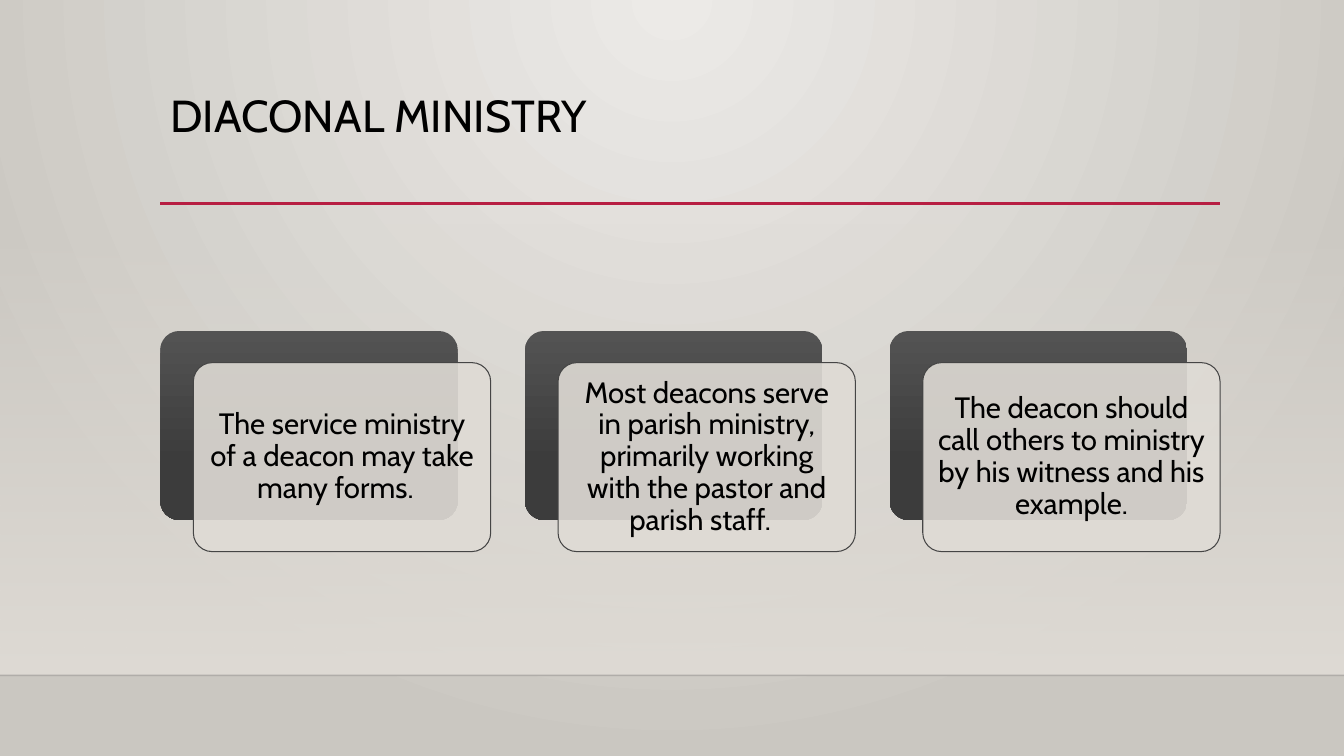
from lxml.etree import SubElement
from pptx import Presentation
from pptx.dml.color import RGBColor
from pptx.enum.shapes import MSO_CONNECTOR as Connector, MSO_SHAPE as Shape
from pptx.enum.text import MSO_ANCHOR as Anchor, PP_ALIGN as Align
from pptx.oxml import parse_xml
from pptx.oxml.ns import nsdecls, qn
from pptx.util import Pt

BLACK = RGBColor(0x00, 0x00, 0x00)
SHADE = RGBColor(0x00, 0x00, 0x01)
CRIMSON = RGBColor(0xB7, 0x1E, 0x42)
SAND = RGBColor(0xDF, 0xDB, 0xD5)
LIGHT_SAND = RGBColor(0xEC, 0xEA, 0xE7)
DARK_SAND = RGBColor(0xCA, 0xC7, 0xC1)
OUTLINE = RGBColor(0x45, 0x45, 0x45)
CHARCOAL = [(0, RGBColor(0x53, 0x53, 0x53), 100),
            (69, RGBColor(0x3C, 0x3C, 0x3C), 100),
            (100, RGBColor(0x39, 0x39, 0x39), 100)]

DOWNWARD = '<a:lin ang="5400000" scaled="0"/>'
FROM_TOP = ('<a:path path="circle">'
            '<a:fillToRect l="43000" t="0" r="43000" b="100000"/></a:path>')

WIDTH, HEIGHT = 960, 540
LEFT, CONTENT_WIDTH = 114.5, 757
FLOOR = 482.4

MINISTRIES = [
    "The service ministry of a deacon may take many forms.  ",
    "Most deacons serve in parish ministry, primarily working with the "
    "pastor and parish staff.  ",
    "The deacon should call others to ministry by his witness and his example.",
]


def apply(target, values):
    for name, value in values.items():
        setattr(target, name, value)


def set_gradient(owner, stops, direction):
    """Give a shape or background a gradient of (position, colour, opacity)."""
    owner.fill.solid()
    element = getattr(owner, "element", None)
    if element is None:
        element = owner._cSld
    solid = next(element.iter(qn("a:solidFill")))
    marks = "".join(
        f'<a:gs pos="{pos * 1000}"><a:srgbClr val="{colour}">'
        f'<a:alpha val="{opacity * 1000}"/></a:srgbClr></a:gs>'
        for pos, colour, opacity in stops)
    gradient = parse_xml(f'<a:gradFill {nsdecls("a")} rotWithShape="1">'
                         f'<a:gsLst>{marks}</a:gsLst>{direction}</a:gradFill>')
    solid.getparent().replace(solid, gradient)


def set_opacity(shape, percent):
    colour = next(shape.element.spPr.iter(qn("a:srgbClr")))
    SubElement(colour, qn("a:alpha")).set("val", str(percent * 1000))


def add_rule(slide, left, top, width, colour, weight):
    rule = slide.shapes.add_connector(
        Connector.STRAIGHT, Pt(left), Pt(top), Pt(left + width), Pt(top))
    rule.line.color.rgb = colour
    rule.line.width = Pt(weight)
    SubElement(rule.element.spPr, qn("a:effectLst"))
    return rule


def add_box(slide, kind, left, top, width, height):
    box = slide.shapes.add_shape(kind, Pt(left), Pt(top), Pt(width), Pt(height))
    box.shadow.inherit = False
    box.line.fill.background()
    return box


def write(frame, text, size, align, anchor):
    apply(frame, {"text": text, "word_wrap": True, "vertical_anchor": anchor})
    paragraph = frame.paragraphs[0]
    apply(paragraph, {"alignment": align, "line_spacing": 0.9})
    apply(paragraph.font, {"name": "Cabin", "size": Pt(size)})
    paragraph.font.color.rgb = BLACK


def draw_backdrop(slide):
    # Page glow, wall shading and floor edge
    set_gradient(slide.background, [(0, LIGHT_SAND, 100), (100, DARK_SAND, 100)],
                 FROM_TOP)
    wall_top = 159
    wall = add_box(slide, Shape.RECTANGLE, 0, wall_top, WIDTH, FLOOR - wall_top)
    set_gradient(wall, [(0, SAND, 0), (100, SAND, 100)], DOWNWARD)
    set_opacity(add_rule(slide, 0, FLOOR, WIDTH, SHADE, 1), 20)


def draw_heading(slide, left, top, width, height):
    # Title with the rule under it
    title = slide.shapes.title
    apply(title, {"left": Pt(left), "top": Pt(top),
                  "width": Pt(width), "height": Pt(height)})
    write(title.text_frame, "DIACONAL MINISTRY", 32, Align.LEFT, Anchor.TOP)
    add_rule(slide, left, top + height - 0.5, width, CRIMSON, 2.5)


def draw_card(slide, text, left, top, width, height):
    # Dark plate behind, translucent card in front
    shift_x, shift_y = 23.6, 22.6
    size = width - shift_x, height - shift_y
    plate = add_box(slide, Shape.ROUNDED_RECTANGLE, left, top, *size)
    set_gradient(plate, CHARCOAL, DOWNWARD)
    card = add_box(slide, Shape.ROUNDED_RECTANGLE,
                   left + shift_x, top + shift_y, *size)
    card.fill.solid()
    card.fill.fore_color.rgb = SAND
    set_opacity(card, 90)
    card.line.color.rgb = OUTLINE
    card.line.width = Pt(0.75)
    for rounded in (plate, card):
        rounded.adjustments[0] = 0.1
    sides = ("left", "top", "right", "bottom")
    apply(card.text_frame, {f"margin_{side}": Pt(6.3) for side in sides})
    write(card.text_frame, text, 21, Align.CENTER, Anchor.MIDDLE)


def draw_cards(slide, left, top, width, height):
    # Equal cards across the content width
    card_width = 236
    step = (width - card_width) / (len(MINISTRIES) - 1)
    for index, text in enumerate(MINISTRIES):
        draw_card(slide, text, left + index * step, top, card_width, height)


def main():
    deck = Presentation()
    apply(deck, {"slide_width": Pt(WIDTH), "slide_height": Pt(HEIGHT)})
    slide = deck.slides.add_slide(deck.slide_layouts[5])
    draw_backdrop(slide)
    draw_heading(slide, LEFT, 63.4, CONTENT_WIDTH, 82.6)
    draw_cards(slide, LEFT, 236.4, CONTENT_WIDTH, 157.6)
    deck.save("out.pptx")


if __name__ == "__main__":
    main()
